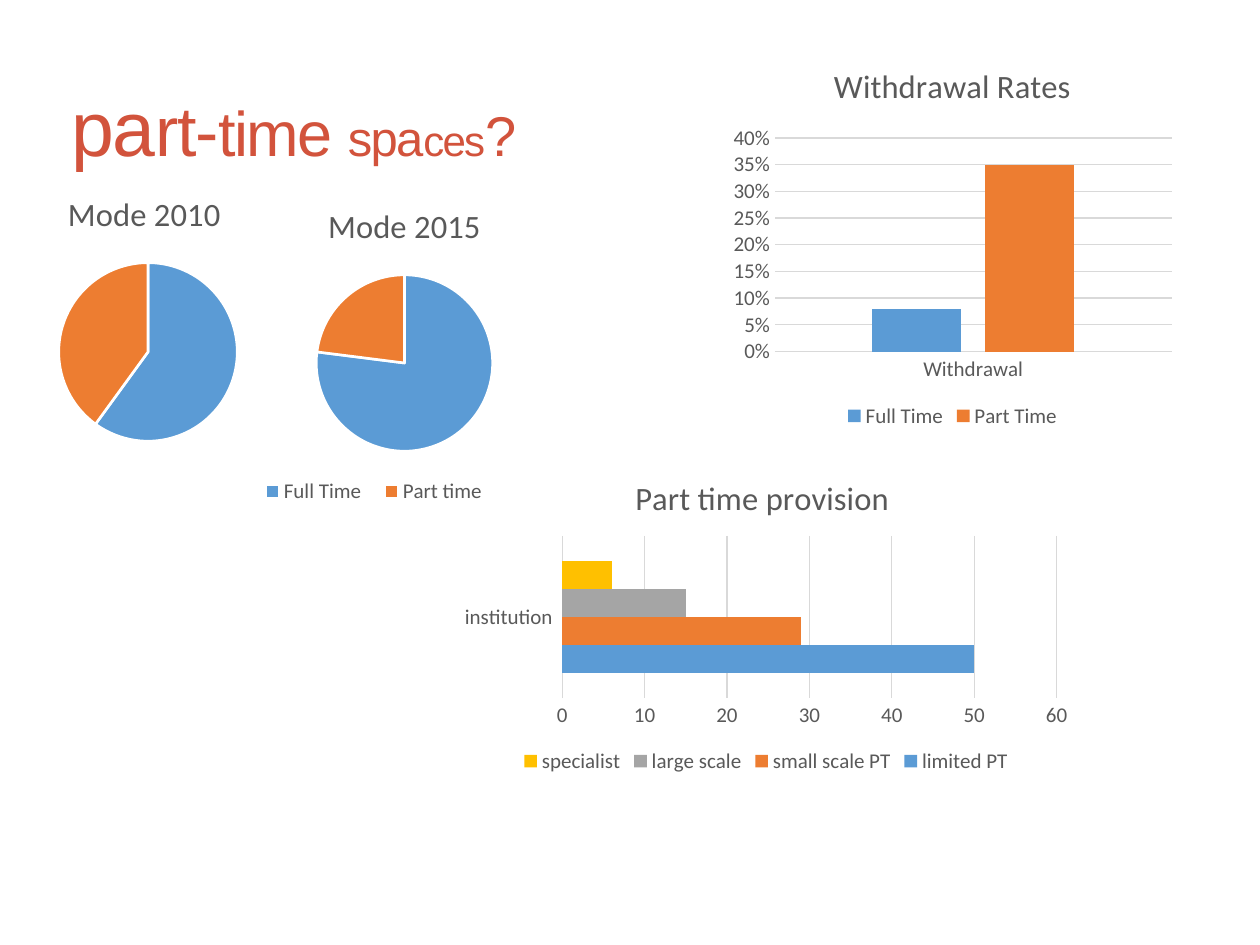
import pptx
import pptx.chart.data
import pptx.dml.color
import pptx.enum.chart
import pptx.enum.text
import pptx.oxml
import pptx.oxml.ns
import pptx.util

RGBColor = pptx.dml.color.RGBColor
ChartType = pptx.enum.chart.XL_CHART_TYPE
BLUE = RGBColor(0x5B, 0x9B, 0xD5)
ORANGE = RGBColor(0xED, 0x7D, 0x31)
GRAY = RGBColor(0xA5, 0xA5, 0xA5)
YELLOW = RGBColor(0xFF, 0xC0, 0x00)
RED = RGBColor(0xD2, 0x53, 0x3C)
TEXT = RGBColor(0x59, 0x59, 0x59)
GRID = RGBColor(0xD9, 0xD9, 0xD9)
WHITE = RGBColor(0xFF, 0xFF, 0xFF)

COLUMNS, ROWS = 100, 75
CELL = pptx.util.Inches(0.1)

TITLE_BOX = (4.7, 5.8, 83.4, 8.4)
MODE_2010_BOX = (0.8, 13.7, 21.9, 22.7)
MODE_2015_BOX = (19.4, 14.6, 25.4, 26.1)
WITHDRAWAL_BOX = (57.5, 3.4, 36.2, 31)
PROVISION_BOX = (35.9, 36.2, 49.8, 25.6)

TITLE_RUNS = [("pa", 44), ("rt-", 40), ("time ", 36),
              ("spa", 28), ("ces", 24), ("?", 32)]


def to_lengths(box):
    return [int(cells * CELL) for cells in box]


def style_font(font, size, color=TEXT, name="Calibri"):
    font.size = pptx.util.Pt(size)
    font.name = name
    font.color.rgb = color
    font.bold = False


def add_title(slide, box):
    title = slide.shapes.title
    title.left, title.top, title.width, title.height = to_lengths(box)
    text_frame = title.text_frame
    text_frame.word_wrap = True
    text_frame.vertical_anchor = pptx.enum.text.MSO_ANCHOR.MIDDLE
    paragraph = text_frame.paragraphs[0]
    paragraph.alignment = pptx.enum.text.PP_ALIGN.LEFT
    for text, size in TITLE_RUNS:
        run = paragraph.add_run()
        run.text = text
        style_font(run.font, size, RED, "Arial")
        run.font._element.set("spc", "-100")


def add_chart(slide, box, chart_type, title, categories, series, legend=True):
    data = pptx.chart.data.CategoryChartData()
    data.categories = categories
    for name, values in series:
        data.add_series(name, values)
    chart = slide.shapes.add_chart(chart_type, *to_lengths(box), data).chart
    style_font(chart.font, 10, RGBColor(0, 0, 0))
    chart.has_title = True
    chart.chart_title.include_in_layout = False
    paragraph = chart.chart_title.text_frame.paragraphs[0]
    paragraph.text = title
    style_font(paragraph.runs[0].font, 18.6)
    chart.has_legend = legend
    if legend:
        chart.legend.position = pptx.enum.chart.XL_LEGEND_POSITION.BOTTOM
        chart.legend.include_in_layout = False
        style_font(chart.legend.font, 12)
    return chart


def place_legend(legend, **shares):
    namespace = pptx.oxml.ns.nsdecls("c")
    modes = '<c:xMode val="edge"/><c:yMode val="edge"/>'
    sizes = "".join(f'<c:{side} val="{share}"/>' for side, share in shares.items())
    layout = pptx.oxml.parse_xml(
        f"<c:layout {namespace}><c:manualLayout>{modes}{sizes}"
        "</c:manualLayout></c:layout>")
    element = legend._element
    for old_layout in element.findall(pptx.oxml.ns.qn("c:layout")):
        element.remove(old_layout)
    element.find(pptx.oxml.ns.qn("c:legendPos")).addnext(layout)


def add_mode_pie(slide, box, title, categories, series_name, values, legend):
    chart = add_chart(slide, box, ChartType.PIE, title, categories,
                      [(series_name, values)], legend)
    plot = chart.plots[0]
    plot.vary_by_categories = True
    for index, color in enumerate((BLUE, ORANGE)):
        point_format = plot.series[0].points[index].format
        point_format.fill.solid()
        point_format.fill.fore_color.rgb = color
        point_format.line.color.rgb = WHITE
        point_format.line.width = pptx.util.Pt(1.5)
    return chart


def add_bars(slide, box, chart_type, title, category, bars, gap, overlap,
             maximum, step, number_format):
    series = [(name, [value]) for name, value, color in bars]
    chart = add_chart(slide, box, chart_type, title, [category], series)
    plot = chart.plots[0]
    plot.vary_by_categories = False
    plot.gap_width = gap
    plot.overlap = overlap
    for bar_series, (name, value, color) in zip(plot.series, bars):
        bar_series.format.fill.solid()
        bar_series.format.fill.fore_color.rgb = color
    value_axis = chart.value_axis
    for axis in (chart.category_axis, value_axis):
        axis.major_tick_mark = pptx.enum.chart.XL_TICK_MARK.NONE
        style_font(axis.tick_labels.font, 12)
    value_axis.minimum_scale = 0
    value_axis.maximum_scale = maximum
    value_axis.major_unit = step
    value_axis.tick_labels.number_format = number_format
    value_axis.tick_labels.number_format_is_linked = False
    value_axis.format.line.fill.background()
    for line in (chart.category_axis.format.line,
                 value_axis.major_gridlines.format.line):
        line.color.rgb = GRID
        line.width = pptx.util.Pt(0.75)


def main():
    presentation = pptx.Presentation()
    presentation.slide_width = COLUMNS * CELL
    presentation.slide_height = ROWS * CELL
    title_only = presentation.slide_layouts.get_by_name("Title Only")
    slide = presentation.slides.add_slide(title_only)
    add_title(slide, TITLE_BOX)
    add_mode_pie(slide, MODE_2010_BOX, "Mode 2010 ", ["1", "2"],
                 "Series 1", [60, 40], False)
    mode_2015 = add_mode_pie(slide, MODE_2015_BOX, "Mode 2015",
                             ["Full Time ", "Part time"],
                             "Mode 2015", [77, 23], True)
    place_legend(mode_2015.legend, x=0.03, y=0.88, w=0.75, h=0.11)
    add_bars(slide, WITHDRAWAL_BOX, ChartType.COLUMN_CLUSTERED,
             "Withdrawal Rates", "Withdrawal",
             [("Full Time", 0.08, BLUE), ("Part Time", 0.35, ORANGE)],
             219, -27, 0.4, 0.05, "0%")
    add_bars(slide, PROVISION_BOX, ChartType.BAR_CLUSTERED,
             "Part time provision ", "institution ",
             [("limited PT", 50, BLUE), ("small scale PT", 29, ORANGE),
              ("large scale", 15, GRAY), ("specialist", 6, YELLOW)],
             182, 0, 60, 10, "General")
    presentation.save("out.pptx")


if __name__ == "__main__":
    main()
